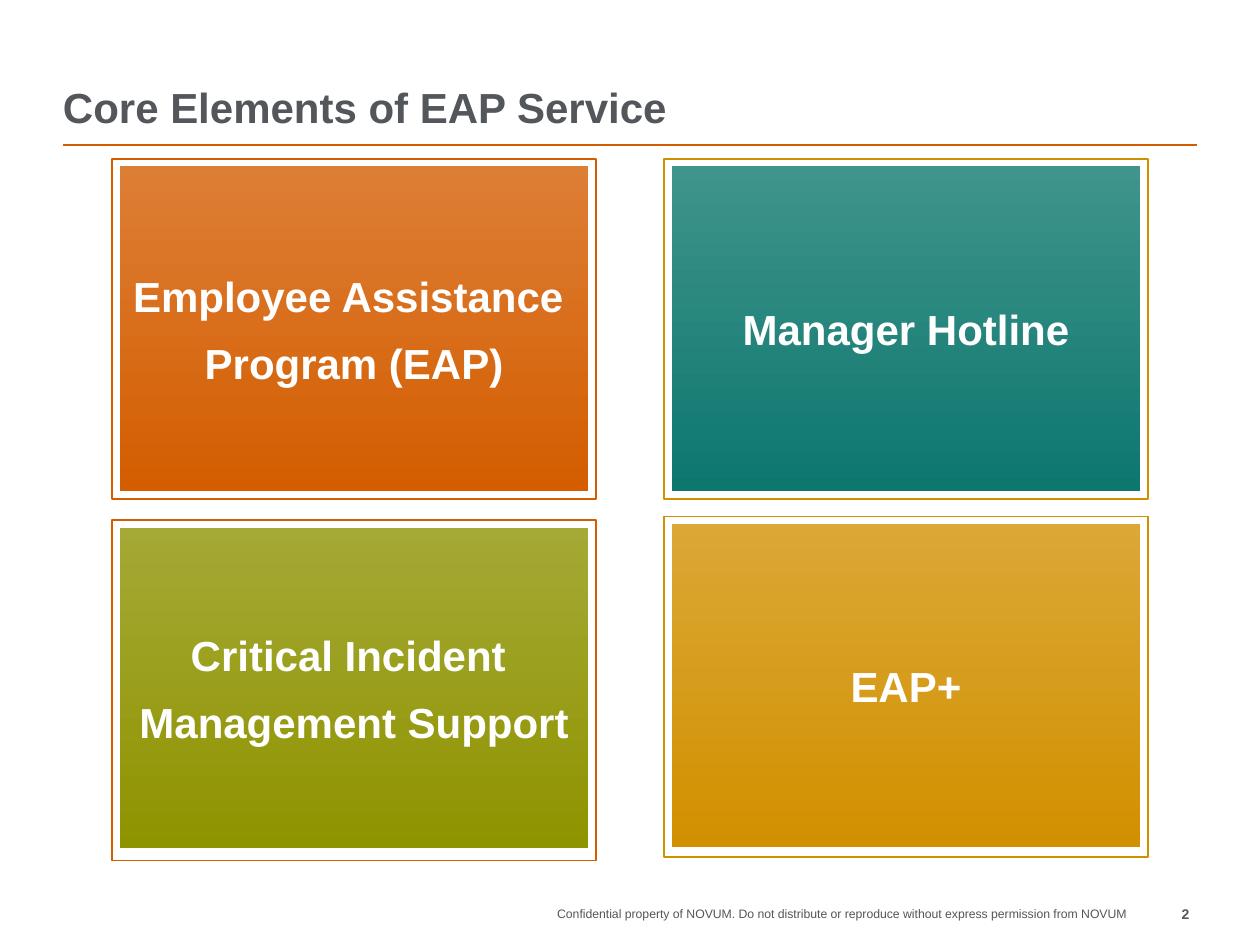
import pptx
import pptx.util
import pptx.dml.color
import pptx.enum.shapes
import pptx.enum.text
import pptx.oxml.ns
from lxml import etree

Inches, Pt = pptx.util.Inches, pptx.util.Pt
RGBColor = pptx.dml.color.RGBColor
ALIGN, ANCHOR = pptx.enum.text.PP_ALIGN, pptx.enum.text.MSO_ANCHOR
RECTANGLE = pptx.enum.shapes.MSO_SHAPE.RECTANGLE

GREY = RGBColor(0x53, 0x56, 0x5A)
WHITE = RGBColor(0xFF, 0xFF, 0xFF)
ORANGE, LIGHT_ORANGE = RGBColor(0xD4, 0x5D, 0x00), RGBColor(0xDD, 0x7E, 0x35)
TEAL, LIGHT_TEAL = RGBColor(0x0D, 0x77, 0x6E), RGBColor(0x3F, 0x94, 0x8B)
GREEN, LIGHT_GREEN = RGBColor(0x8E, 0x93, 0x00), RGBColor(0xA5, 0xA9, 0x35)
GOLD, LIGHT_GOLD = RGBColor(0xD1, 0x90, 0x00), RGBColor(0xDB, 0xA7, 0x35)


def write(frame, lines, size, color, bold, align, anchor, margin=0):
    frame.margin_left = frame.margin_right = Inches(margin)
    frame.margin_top = frame.margin_bottom = Inches(margin)
    frame.vertical_anchor = anchor
    for index, line in enumerate(lines):
        paragraph = frame.paragraphs[0] if index == 0 else frame.add_paragraph()
        paragraph.text = line
        paragraph.alignment = align
        paragraph.font.name = "Arial"
        paragraph.font.size = Pt(size)
        paragraph.font.bold = bold
        paragraph.font.color.rgb = color


def add_label(slide, box, text, size, bold, align, anchor=ANCHOR.TOP):
    frame = slide.shapes.add_textbox(*map(Inches, box)).text_frame
    frame.word_wrap = True
    write(frame, [text], size, GREY, bold, align, anchor)


def add_header(slide, left, top, width, height):
    add_label(slide, (left, top, width, height), "Core Elements of EAP Service",
              24, True, ALIGN.LEFT, ANCHOR.BOTTOM)
    rule_y = Inches(top + height + 0.1)
    rule = slide.shapes.add_connector(
        pptx.enum.shapes.MSO_CONNECTOR.STRAIGHT,
        Inches(left), rule_y, Inches(left + width), rule_y)
    rule.line.color.rgb = ORANGE
    rule.line.width = Pt(1)
    etree.SubElement(rule._element.spPr, pptx.oxml.ns.qn("a:effectLst"))


def add_footer(slide, left, top, width, height):
    number_width = 0.5
    notice_width = width - number_width
    add_label(slide, (left, top, notice_width, height),
              "Confidential property of NOVUM. Do not distribute or reproduce "
              "without express permission from NOVUM", 7, False, ALIGN.RIGHT)
    add_label(slide, (left + notice_width, top, number_width, height),
              "2", 8, True, ALIGN.RIGHT)


def add_tile(slide, left, top, width, height, panel_height, lines,
             border, light, dark):
    # Outlined frame
    frame = slide.shapes.add_shape(
        RECTANGLE, *map(Inches, (left, top, width, height)))
    frame.shadow.inherit = False
    frame.fill.background()
    frame.line.color.rgb = border
    frame.line.width = Pt(1)

    # Gradient panel inside the frame
    inset = 0.06
    panel = slide.shapes.add_shape(RECTANGLE, *map(Inches, (
        left + inset, top + inset, width - 2 * inset, panel_height)))
    panel.shadow.inherit = False
    panel.line.fill.background()
    panel.fill.gradient()
    panel.fill.gradient_angle = 270
    for stop, color in zip(panel.fill.gradient_stops, (light, dark)):
        stop.color.rgb = color

    text = panel.text_frame
    text.word_wrap = False
    write(text, lines, 24, WHITE, True, ALIGN.CENTER, ANCHOR.MIDDLE, 0.05)
    for paragraph in text.paragraphs:
        paragraph.space_after = Pt(9.6)


def add_tiles(slide, left, top, width, height):
    tile_width, tile_height = 3.84, 2.7
    right = left + width - tile_width
    bottom = top + height - tile_height
    tiles = [
        (left, top, 2.58, ["Employee Assistance ", "Program (EAP)"],
         ORANGE, LIGHT_ORANGE, ORANGE),
        (right, top, 2.58, ["Manager Hotline"], GOLD, LIGHT_TEAL, TEAL),
        (left, bottom, 2.54, ["Critical Incident ", "Management Support"],
         ORANGE, LIGHT_GREEN, GREEN),
        (right, bottom - 0.03, 2.56, ["EAP+"], GOLD, LIGHT_GOLD, GOLD),
    ]
    for x, y, *details in tiles:
        add_tile(slide, x, y, tile_width, tile_height, *details)


def main():
    deck = pptx.Presentation()
    deck.slide_width, deck.slide_height = Inches(10), Inches(7.5)
    slide = deck.slides.add_slide(deck.slide_layouts[6])
    add_header(slide, 0.5, 0.21, 9, 0.84)
    add_tiles(slide, 0.89, 1.26, 8.22, 5.57)
    add_footer(slide, 3.33, 7.19, 6.11, 0.23)
    deck.save("out.pptx")


if __name__ == "__main__":
    main()
